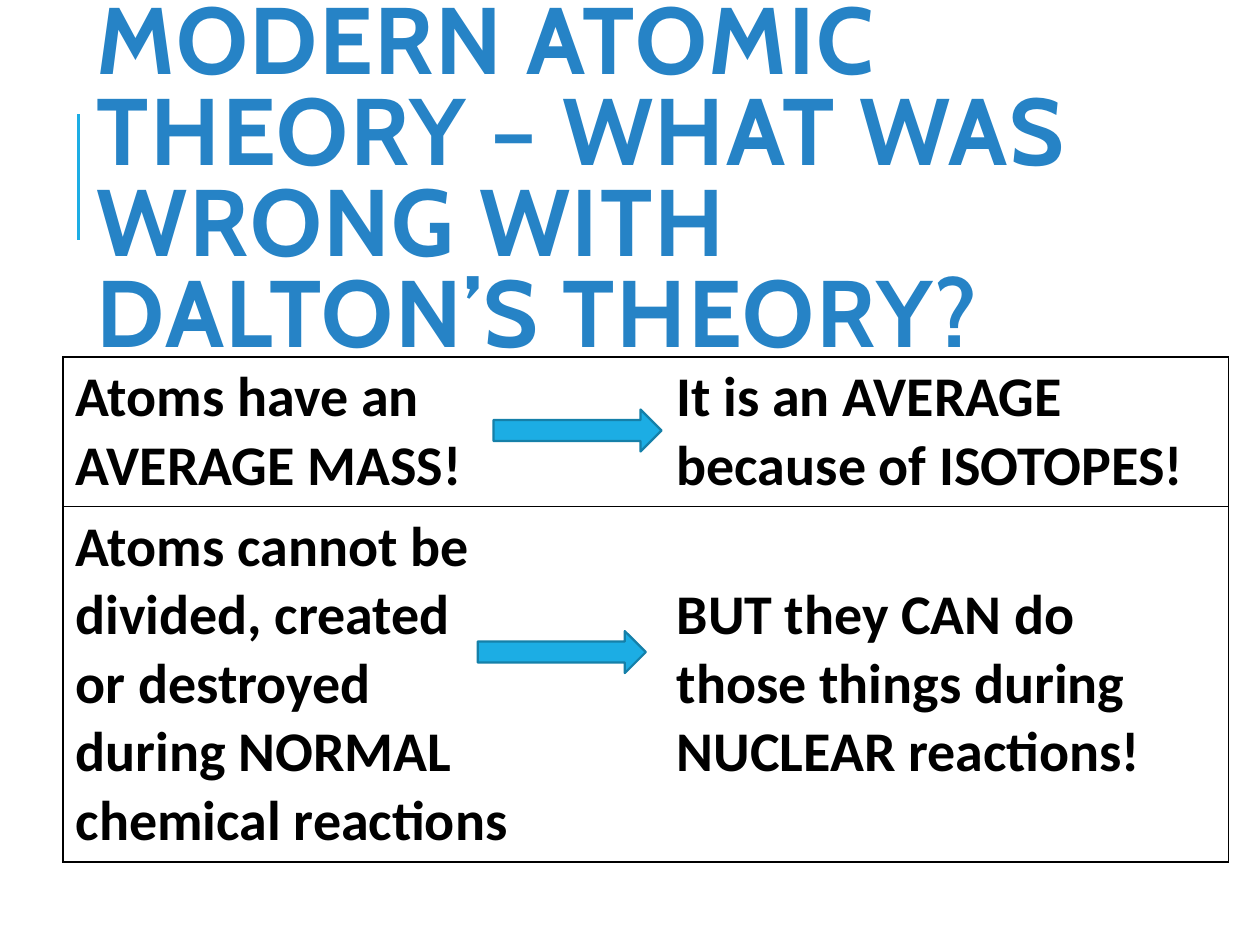
from lxml import etree
from pptx import Presentation
from pptx.dml.color import RGBColor
from pptx.enum.shapes import MSO_CONNECTOR, MSO_SHAPE
from pptx.enum.text import MSO_ANCHOR, MSO_AUTO_SIZE, PP_ALIGN
from pptx.oxml.ns import qn
from pptx.util import Pt

STRAIGHT = MSO_CONNECTOR.STRAIGHT
RIGHT_ARROW = MSO_SHAPE.RIGHT_ARROW
TOP, MIDDLE = MSO_ANCHOR.TOP, MSO_ANCHOR.MIDDLE
NO_FIT = MSO_AUTO_SIZE.NONE
LEFT = PP_ALIGN.LEFT
TITLE_BLUE = RGBColor(0x26, 0x83, 0xC6)
CYAN = RGBColor(0x1C, 0xAD, 0xE4)
DARK_CYAN = RGBColor(0x15, 0x80, 0xA9)
BLACK = RGBColor(0, 0, 0)

TITLE = "MODERN ATOMIC THEORY – WHAT WAS WRONG WITH DALTON’S THEORY?"
ROWS = [
    ("Atoms have an AVERAGE MASS!", "It is an AVERAGE because of ISOTOPES!"),
    ("Atoms cannot be divided, created \nor destroyed \nduring NORMAL chemical reactions",
     "BUT they CAN do those things during NUCLEAR reactions!"),
]
COLUMN_STYLES = [("LTB", TOP, 40), ("RTB", MIDDLE, 7.2)]


class SlideBuilder:
    """Draws styled elements on one slide, with all lengths in points."""

    def __init__(self, slide):
        self.slide = slide
        self.title_font, self.body_font = "Cabin", "Calibri"

    def format_runs(self, p, name, size, color):
        p.alignment = LEFT
        for r in p.runs:
            r.font.name = name
            r.font.size = Pt(size)
            r.font.bold = True
            r.font.color.rgb = color

    def title(self, text, x, y, w, h):
        sp = self.slide.shapes.title
        sp.left, sp.top, sp.width, sp.height = Pt(x), Pt(y), Pt(w), Pt(h)
        tf = sp.text_frame
        tf.word_wrap = True
        tf.auto_size = NO_FIT
        tf.vertical_anchor = MIDDLE
        p = tf.paragraphs[0]
        p.text = text
        p.line_spacing = 0.8
        p.space_before = Pt(0)
        self.format_runs(p, self.title_font, 54, TITLE_BLUE)
        for r in p.runs:
            r.font._element.set("spc", "100")

    def line(self, x1, y1, x2, y2):
        cxn = self.slide.shapes.add_connector(STRAIGHT, Pt(x1), Pt(y1), Pt(x2), Pt(y2))
        cxn.line.color.rgb = CYAN
        cxn.line.width = Pt(1.5)
        etree.SubElement(cxn._element.spPr, qn("a:effectLst"))

    def arrow(self, x, y, w, h):
        sp = self.slide.shapes.add_shape(RIGHT_ARROW, Pt(x), Pt(y), Pt(w), Pt(h))
        sp.shadow.inherit = False
        sp.fill.solid()
        sp.fill.fore_color.rgb = CYAN
        sp.line.color.rgb = DARK_CYAN
        sp.line.width = Pt(1.25)

    def borders(self, cell, visible):
        tc_pr = cell._tc.get_or_add_tcPr()
        for side in "LRTB":
            ln = etree.SubElement(tc_pr, qn(f"a:ln{side}"), w=str(Pt(1)))
            if side in visible:
                fill = etree.SubElement(ln, qn("a:solidFill"))
                etree.SubElement(fill, qn("a:srgbClr"), val=str(BLACK))
            else:
                etree.SubElement(ln, qn("a:noFill"))

    def table(self, rows, x, y, widths, heights):
        frame = self.slide.shapes.add_table(
            len(rows), len(widths), Pt(x), Pt(y), Pt(sum(widths)), Pt(sum(heights)))
        table = frame.table
        table.first_row = table.horz_banding = False
        for column, width in zip(table.columns, widths):
            column.width = Pt(width)
        for row, height, texts in zip(table.rows, heights, rows):
            row.height = Pt(height)
            for cell, text, (sides, anchor, margin) in zip(row.cells, texts, COLUMN_STYLES):
                self.borders(cell, sides)
                cell.fill.background()
                cell.vertical_anchor = anchor
                cell.margin_right = Pt(margin)
                p = cell.text_frame.paragraphs[0]
                p.text = text
                self.format_runs(p, self.body_font, 32, BLACK)


def main():
    prs = Presentation()
    prs.slide_width, prs.slide_height = Pt(720), Pt(540)
    s = SlideBuilder(prs.slides.add_slide(prs.slide_layouts[5]))
    s.line(45, 137, 45, 65)
    s.title(TITLE, 48, 24, 612, 162)
    s.table(ROWS, 36, 204, (343.5, 322.5), (85, 203))
    for x, y in ((282, 234), (273, 360.6)):
        s.arrow(x, y, 96, 24)
    prs.save("out.pptx")


if __name__ == "__main__":
    main()
